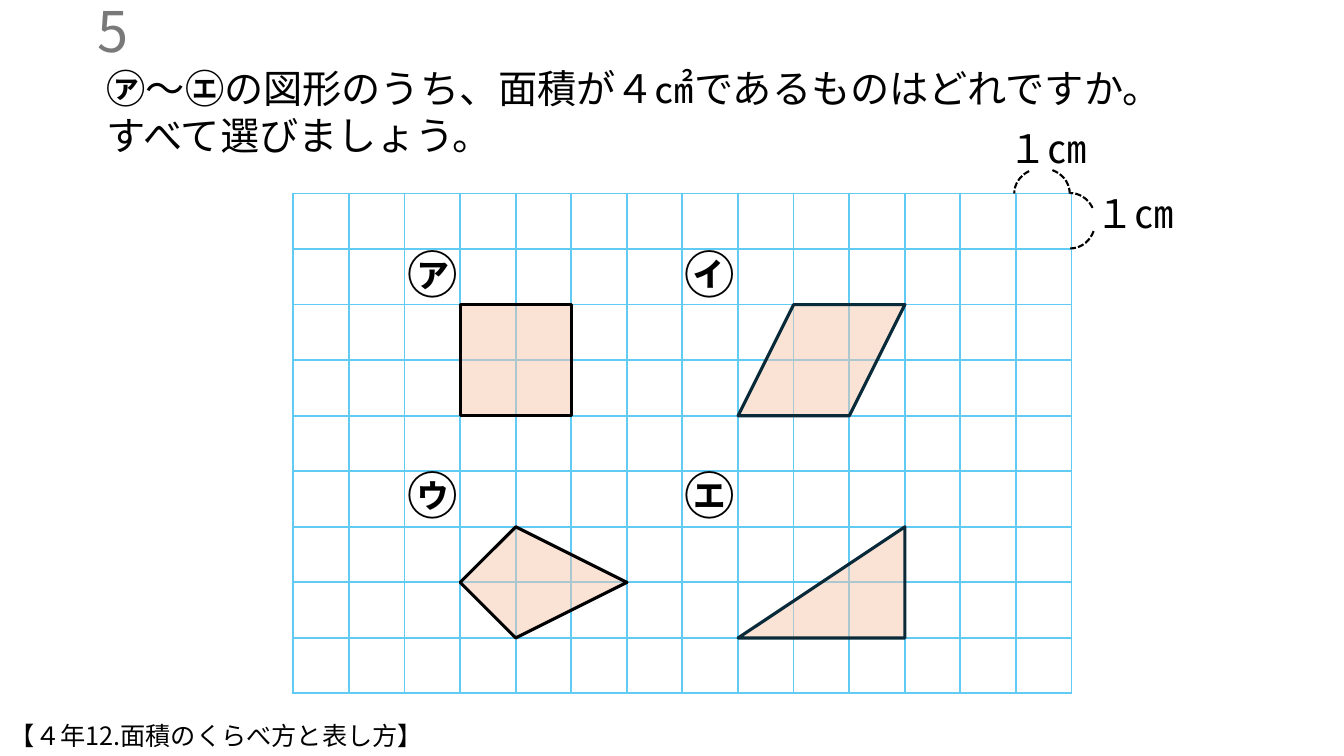
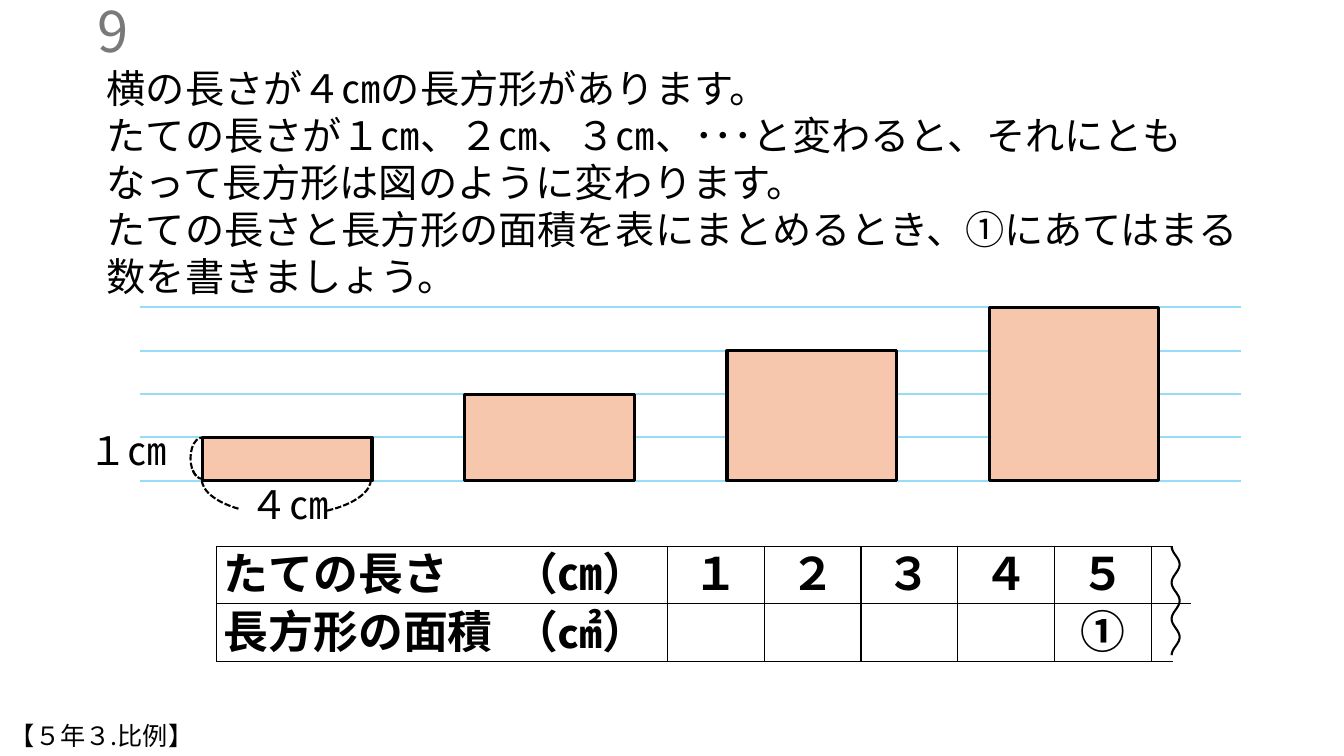
import math

from lxml import etree
from pptx import Presentation
from pptx import util as u
from pptx.dml.color import RGBColor
from pptx.enum import dml, shapes, text
from pptx.oxml.ns import qn

PX = 9144  # EMU, a hundredth of an inch
FONT = "Noto Sans CJK JP"
BLACK, GRAY, NAVY = "000000", "797979", "092A39"
PEACH, GRID_BLUE, RULE_BLUE = "F6C6AD", "61CBF4", "96DCF8"
NO_TABLE_STYLE = "{2D5ABB26-0587-4C30-8999-92F81FD0307C}"
KIND = shapes.MSO_SHAPE


def emu(*lengths):
    return [u.Emu(round(length * PX)) for length in lengths]


def rgb(value):
    return RGBColor.from_string(value)


class Deck:
    """Holds the shared style and the slide being filled."""

    def __init__(self):
        self.prs = Presentation()
        self.prs.slide_width, self.prs.slide_height = emu(1333, 750)

    def question(self, number, paragraphs, width, height, unit):
        """Start a slide with its number, question and unit name."""
        self.slide = self.prs.slides.add_slide(self.prs.slide_layouts[1])
        title, body = self.slide.placeholders
        self.set_text(title, (0, 10, 137, 40), [number], 40, GRAY,
                      align=text.PP_ALIGN.RIGHT)
        title.text_frame.vertical_anchor = text.MSO_ANCHOR.MIDDLE
        self.set_text(body, (96, 59, width, height), paragraphs, 28)
        self.label(unit, 0, 710, 749, 40, 18)

    def set_text(self, box, place, paragraphs, size, color=BLACK, bold=None,
                 align=None):
        box.left, box.top, box.width, box.height = emu(*place)
        frame = box.text_frame
        frame.word_wrap = True
        frame.auto_size = text.MSO_AUTO_SIZE.NONE
        for index, content in enumerate(paragraphs):
            paragraph = frame.add_paragraph() if index else frame.paragraphs[0]
            self.fill_paragraph(paragraph, content, size, color, bold, align)

    def fill_paragraph(self, paragraph, content, size, color=BLACK, bold=None,
                       align=None):
        """Content is a string, or a list of (string, bold) runs."""
        runs = [(content, None)] if isinstance(content, str) else content
        for words, run_bold in runs:
            run = paragraph.add_run()
            run.text = words
            run.font.bold = run_bold
        properties = paragraph._p.get_or_add_pPr()
        properties.set("marL", "0")
        properties.set("indent", "0")
        etree.SubElement(properties, qn("a:buNone"))
        paragraph.alignment = align or text.PP_ALIGN.LEFT
        paragraph.space_before = u.Pt(0)
        paragraph.line_spacing = u.Pt(size * 1.2)
        font = paragraph.font
        font.size, font.bold, font.name = u.Pt(size), bold, FONT
        font.color.rgb = rgb(color)
        etree.SubElement(font._rPr, qn("a:ea"), typeface=FONT)

    def label(self, words, x, y, width=118, height=57, size=28, bold=None):
        box = self.slide.shapes.add_textbox(0, 0, 0, 0)
        self.set_text(box, (x, y, width, height), [words], size, bold=bold)

    def paint(self, shape, fill=None, line=BLACK, weight=2.25, opacity=100):
        shape.shadow.inherit = False
        shape.line.color.rgb = rgb(line)
        shape.line.width = u.Pt(weight)
        if fill is None:
            shape.fill.background()
            return
        shape.fill.solid()
        shape.fill.fore_color.rgb = rgb(fill)
        if opacity < 100:
            color = shape._element.spPr.find(qn("a:solidFill"))[0]
            etree.SubElement(color, qn("a:alpha"), val=str(opacity * 1000))

    def figure(self, kind, x, y, width, height, rotation=0, **paint):
        shape = self.slide.shapes.add_shape(kind, *emu(x, y, width, height))
        shape.rotation = rotation
        self.paint(shape, **paint)
        return shape

    def outline(self, points, close=True, **paint):
        corners = [emu(*point) for point in points]
        builder = self.slide.shapes.build_freeform(*corners[0], scale=1.0)
        builder.add_line_segments(corners[1:], close=close)
        self.paint(builder.convert_to_shape(), **paint)

    def brace(self, x, y, width, height, rotation, starts):
        """Dashed measure mark: an arc and its mirrored partner, starts in degrees."""
        for mirrored, start in enumerate(starts):
            arc = self.figure(KIND.ARC, x, y, width, height, rotation, weight=1.5)
            arc.adjustments[0] = start * 0.6
            arc.adjustments[1] = 0
            arc.line.dash_style = dml.MSO_LINE.SQUARE_DOT
            if mirrored:
                arc._element.spPr.find(qn("a:xfrm")).set("flipH", "1")

    def rule(self, x1, x2, y):
        line = self.slide.shapes.add_connector(
            shapes.MSO_CONNECTOR.STRAIGHT, *emu(x1, y, x2, y))
        line.line.color.rgb = rgb(RULE_BLUE)
        line.line.width = u.Pt(1.5)
        etree.SubElement(line._element.spPr, qn("a:effectLst"))

    def table(self, x, y, widths, heights):
        frame = self.slide.shapes.add_table(
            len(heights), len(widths), *emu(x, y, sum(widths), sum(heights)))
        table = frame.table
        table.first_row = table.horz_banding = False
        table._tbl.tblPr.find(qn("a:tableStyleId")).text = NO_TABLE_STYLE
        for column, width in zip(table.columns, emu(*widths)):
            column.width = width
        for row, height in zip(table.rows, emu(*heights)):
            row.height = height
        return table

    def border(self, cell, color, weight, sides="LRTB"):
        """Draw the named sides of a cell and clear the rest."""
        properties = cell._tc.get_or_add_tcPr()
        for side in "LRTB":
            line = etree.SubElement(properties, qn(f"a:ln{side}"),
                                    w=str(int(u.Pt(weight))))
            if side in sides:
                fill = etree.SubElement(line, qn("a:solidFill"))
                etree.SubElement(fill, qn("a:srgbClr"), val=color)
            else:
                etree.SubElement(line, qn("a:noFill"))
        cell.fill.background()


def area_slide(deck):
    deck.question("5", [
        [("㋐", True), ("～", False), ("㋓", True),
         ("の図形のうち、面積が４㎠であるものはどれですか。", False)],
        "すべて選びましょう。",
    ], 1135, 104, "【４年12.面積のくらべ方と表し方】")

    left, top, columns, rows = 291, 192, 14, 9
    step_x, step_y = 772 / columns, 496 / rows

    def at(column, row):
        return left + column * step_x, top + row * step_y

    grid = deck.table(left, top, [step_x] * columns, [step_y] * rows)
    for cell in grid.iter_cells():
        deck.border(cell, GRID_BLUE, 1.5)

    deck.brace(1006, 167, 55, 50, 0, (294, 300))
    deck.brace(1034, 194, 55, 50, 90, (294, 300))
    deck.label("１㎝", 990, 118)
    deck.label("１㎝", 1077, 183)
    for index, mark in enumerate("㋐㋑㋒㋓"):
        row, column = divmod(index, 2)
        deck.label(mark, 394 + 275 * column, 236 + 220 * row, 64, 71, 36, True)

    tint = dict(fill=PEACH, opacity=50)
    deck.figure(KIND.RECTANGLE, *at(3, 2), 2 * step_x, 2 * step_y, **tint)
    slanted = deck.figure(KIND.PARALLELOGRAM, *at(8, 2), 3 * step_x, 2 * step_y,
                          line=NAVY, **tint)
    slanted.adjustments[0] = 0.5
    deck.outline([at(4, 6), at(3, 7), at(4, 8), at(6, 7)], **tint)
    # A quarter turn swaps width and height around the centre.
    center_x, center_y = at(9.5, 7)
    deck.figure(KIND.RIGHT_TRIANGLE, center_x - step_y, center_y - 1.5 * step_x,
                2 * step_y, 3 * step_x, 270, line=NAVY, **tint)


def proportion_slide(deck):
    deck.question("9", [
        "横の長さが４㎝の長方形があります。",
        "たての長さが１㎝、２㎝、３㎝、･･･と変わると、それにともなって長方形は図のように変わります。",
        "たての長さと長方形の面積を表にまとめるとき、①にあてはまる数を書きましょう。",
    ], 1148, 246, "【５年３.比例】")

    base, unit = 477, 43
    for level in range(5):
        deck.rule(139, 1231, base - level * unit)
    for index in range(4):
        height = (index + 1) * unit
        deck.figure(KIND.RECTANGLE, 201 + 260 * index, base - height, 168, height,
                    fill=PEACH)
    deck.brace(200, 439, 168, 72, 180, (328, 322))
    deck.brace(180, 443, 41, 23, 270, (198, 322))
    deck.label("４㎝", 238, 472)
    deck.label("１㎝", 78, 418)

    contents = [
        ["たての長さ", "（㎝）", "１", "２", "３", "４", "５", "", ""],
        ["長方形の面積", "（㎠）", "", "", "", "", "①", "", ""],
    ]
    column_sides = ["LTB", "RTB"] + ["LRTB"] * 5 + ["LTB"]
    left, top = 215, 542
    table = deck.table(left, top, [287, 160] + [96] * 5 + [22, 7], [57, 57])
    for row, (words_in_row, last_side) in enumerate(zip(contents, "BT")):
        for column, words in enumerate(words_in_row):
            cell = table.cell(row, column)
            cell.margin_left, cell.margin_right = emu(7, 7)
            cell.margin_top = cell.margin_bottom = 0
            cell.vertical_anchor = text.MSO_ANCHOR.BOTTOM
            if words:
                align = text.PP_ALIGN.CENTER if column > 1 else text.PP_ALIGN.LEFT
                deck.fill_paragraph(cell.text_frame.paragraphs[0], words, 32,
                                    bold=True, align=align)
            deck.border(cell, BLACK, 1, (column_sides + [last_side])[column])

    wave = [(1166 - 4 * math.cos(math.tau * y / 36), top + y)
            for y in range(0, 109, 2)]
    deck.outline(wave, close=False, weight=1.5)


def main():
    deck = Deck()
    area_slide(deck)
    proportion_slide(deck)
    deck.prs.save("out.pptx")


if __name__ == "__main__":
    main()
